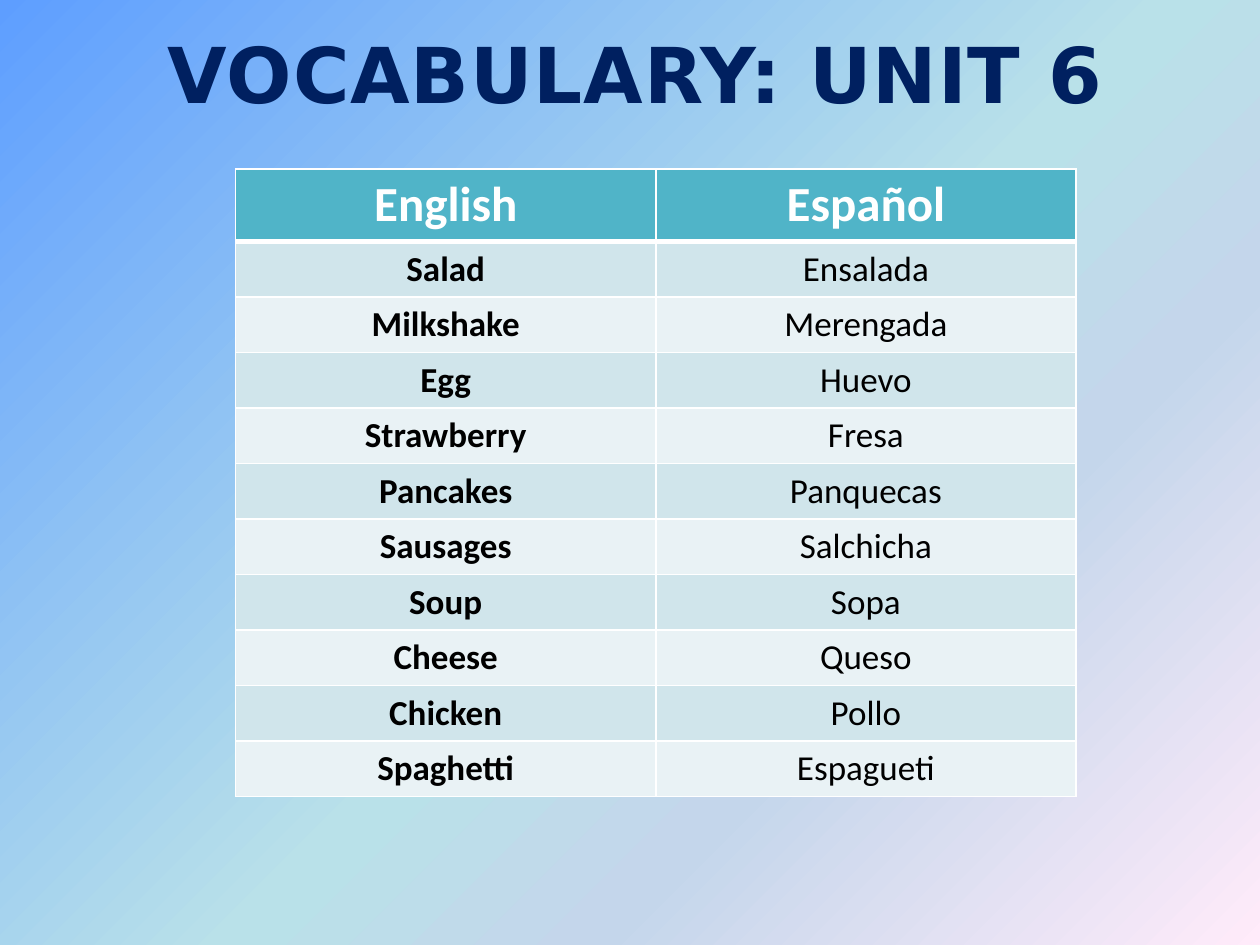
from dataclasses import dataclass

from lxml import etree
from pptx import Presentation
from pptx.dml.color import RGBColor
from pptx.enum.text import MSO_AUTO_SIZE, PP_ALIGN
from pptx.oxml.ns import nsdecls, qn
from pptx.oxml import parse_xml
from pptx.util import Inches, Pt

CENTER = PP_ALIGN.CENTER
FIT_SHAPE = MSO_AUTO_SIZE.SHAPE_TO_FIT_TEXT
BLANK_LAYOUT = 6


@dataclass(frozen=True)
class Theme:
    title_font: str = "DejaVu Sans"
    table_font: str = "Calibri"
    title_size: int = 44
    header_size: int = 28
    word_size: int = 20
    navy: str = "002060"
    white: str = "FFFFFF"
    black: str = "000000"
    header_fill: str = "50B4C8"
    bands: tuple = ("D0E5EB", "E9F2F5")
    title_shadow: str = "80C4DA"
    # Position in percent and colour of each background stop
    background: tuple = ((0, "5E9EFF"), (53, "B9E1E9"),
                         (70, "C4D6EB"), (100, "FFEBFA"))


@dataclass(frozen=True)
class Entry:
    english: str
    spanish: str


THEME = Theme()
HEADINGS = Entry("English", "Español")
VOCABULARY = [
    Entry("Salad", "Ensalada"),
    Entry("Milkshake", "Merengada"),
    Entry("Egg", "Huevo"),
    Entry("Strawberry", "Fresa"),
    Entry("Pancakes", "Panquecas"),
    Entry("Sausages", "Salchicha"),
    Entry("Soup", "Sopa"),
    Entry("Cheese", "Queso"),
    Entry("Chicken", "Pollo"),
    Entry("Spaghetti", "Espagueti"),
]


def format_text(paragraph, font_name: str, size: int, color: str, bold: bool) -> None:
    paragraph.alignment = CENTER
    for run in paragraph.runs:
        run.font.name = font_name
        run.font.size = Pt(size)
        run.font.bold = bold
        run.font.color.rgb = RGBColor.from_string(color)


def paint_background(slide) -> None:
    fill = slide.background.fill
    fill.gradient()
    fill.gradient_angle = 315  # counter-clockwise: top left to bottom right
    stops = slide.element.find(".//" + qn("a:gsLst"))
    for stop in list(stops):
        stops.remove(stop)
    for percent, color in THEME.background:
        stop = etree.SubElement(stops, qn("a:gs"), pos=str(percent * 1000))
        etree.SubElement(stop, qn("a:srgbClr"), val=color)


def add_title(slide, text: str) -> None:
    title = slide.shapes.add_textbox(Inches(0.88), Inches(0.16), Inches(8.33), Inches(0.84))
    frame = title.text_frame
    frame.word_wrap = True
    frame.auto_size = FIT_SHAPE
    frame.text = text
    heading = frame.paragraphs[0]
    format_text(heading, THEME.title_font, THEME.title_size, THEME.navy, True)

    # Letter spacing, thin outline and soft shadow
    properties = heading.runs[0].font._element if hasattr(heading.runs[0].font, "_element") \
        else heading.runs[0]._r.get_or_add_rPr()
    properties.set("spc", "50")
    properties.insert(0, parse_xml(
        f'<a:ln {nsdecls("a")} w="{Pt(0.75)}"><a:solidFill>'
        f'<a:srgbClr val="{THEME.white}"/></a:solidFill></a:ln>'))
    properties.find(qn("a:solidFill")).addnext(parse_xml(
        f'<a:effectLst {nsdecls("a")}><a:outerShdw blurRad="0" dist="{Pt(2)}" dir="2700000">'
        f'<a:srgbClr val="{THEME.title_shadow}"/></a:outerShdw></a:effectLst>'))


def set_borders(cell, bottom_width: int, top_width: int) -> None:
    widths = {"a:lnL": 1, "a:lnR": 1, "a:lnT": top_width, "a:lnB": bottom_width}
    properties = cell._tc.get_or_add_tcPr()
    for position, (side, width) in enumerate(widths.items()):
        properties.insert(position, parse_xml(
            f'<{side} {nsdecls("a")} w="{Pt(width)}"><a:solidFill>'
            f'<a:srgbClr val="{THEME.white}"/></a:solidFill></{side}>'))


def fill_row(cells, entry: Entry, row: int) -> None:
    is_header = row == 0
    fill_color = THEME.header_fill if is_header else THEME.bands[(row - 1) % 2]
    size = THEME.header_size if is_header else THEME.word_size
    color = THEME.white if is_header else THEME.black
    for column, (cell, word) in enumerate(zip(cells, (entry.english, entry.spanish))):
        cell.text_frame.text = word
        format_text(cell.text_frame.paragraphs[0], THEME.table_font, size, color,
                    bold=is_header or column == 0)
        cell.fill.solid()
        cell.fill.fore_color.rgb = RGBColor.from_string(fill_color)
        set_borders(cell, bottom_width=3 if is_header else 1, top_width=3 if row == 1 else 1)


def add_vocabulary_table(slide, entries: list[Entry]) -> None:
    rows = [HEADINGS, *entries]
    header_height, word_height = Inches(0.56), Inches(0.44)
    vocabulary = slide.shapes.add_table(
        len(rows), 2, Inches(1.87), Inches(1.34), Inches(6.67),
        header_height + word_height * len(entries)).table
    for index, entry in enumerate(rows):
        row = vocabulary.rows[index]
        row.height = word_height if index else header_height
        fill_row(row.cells, entry, index)


def main() -> None:
    deck = Presentation()
    deck.slide_width, deck.slide_height = Inches(10), Inches(7.5)
    slide = deck.slides.add_slide(deck.slide_layouts[BLANK_LAYOUT])
    paint_background(slide)
    add_vocabulary_table(slide, VOCABULARY)
    add_title(slide, "VOCABULARY: UNIT 6")
    deck.save("out.pptx")


if __name__ == "__main__":
    main()
